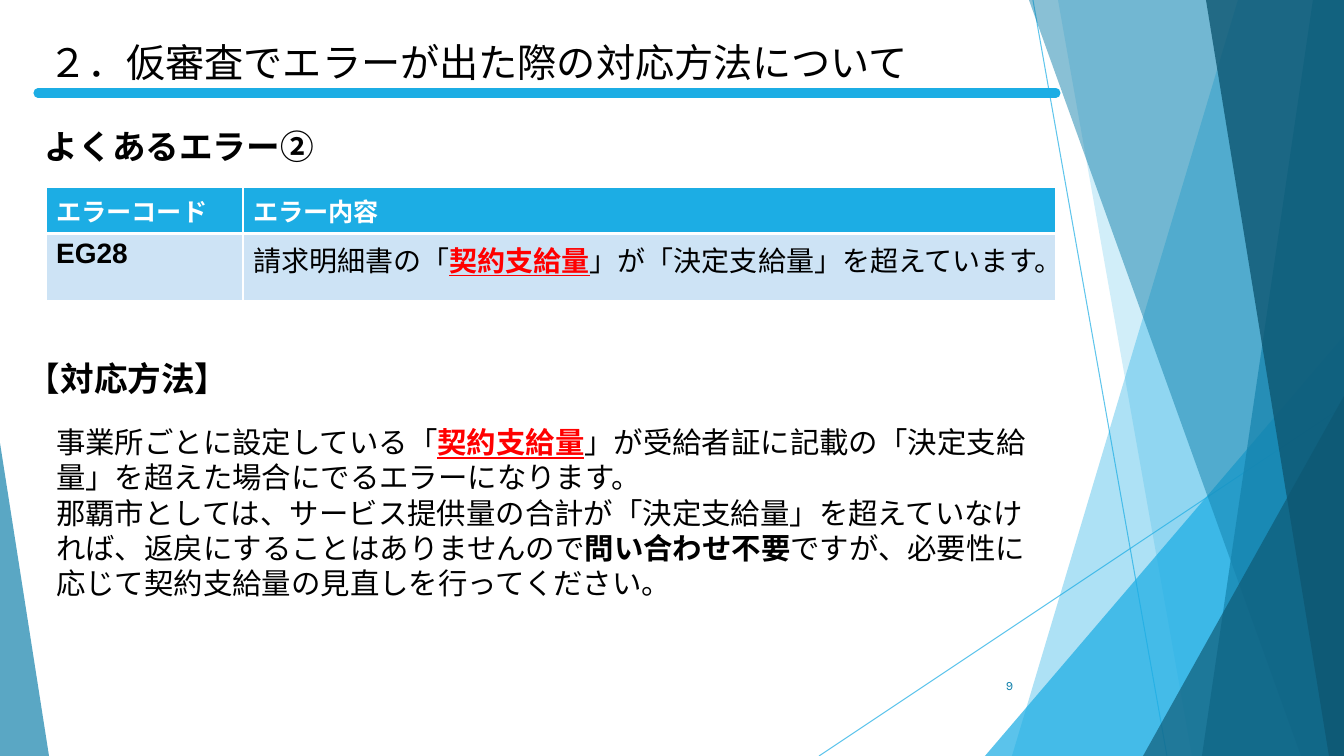
from lxml.etree import SubElement
from pptx import Presentation
from pptx.dml.color import RGBColor
from pptx.enum.shapes import MSO_CONNECTOR as CONNECTOR, MSO_SHAPE as SHAPE
from pptx.enum.text import MSO_ANCHOR as ANCHOR, MSO_AUTO_SIZE as AUTO_SIZE, PP_ALIGN as ALIGN
from pptx.oxml.ns import qn
from pptx.util import Pt

EMU_PER_PX = 914400 / 100.8
WIDTH, HEIGHT = 1344, 756
BLACK, WHITE, RED = "000000", "FFFFFF", "FF0000"
SKY, BLUE, NAVY, PALE = "1CADE4", "1482AC", "0E5772", "CDE3F5"


def px(*lengths):
    return [round(length * EMU_PER_PX) for length in lengths]


def paint(fill, color, opacity=100):
    fill.solid()
    fill.fore_color.rgb = RGBColor.from_string(color)
    if opacity < 100:
        tint = fill._xPr.find(qn("a:solidFill"))[0]
        SubElement(tint, qn("a:alpha"), val=str(opacity * 1000))


def add_runs(paragraph, runs, size, font, color=BLACK):
    """Each run is (text, style); style holds b for bold and r for red underlined."""
    for text, style in runs:
        run = paragraph.add_run()
        run.text = text
        run.font.name = font
        run.font.size = Pt(size)
        run.font.bold = "b" in style
        run.font.underline = "r" in style
        paint(run.font.fill, RED if "r" in style else color)


def place(placeholder, box, anchor=ANCHOR.TOP):
    placeholder.left, placeholder.top, placeholder.width, placeholder.height = px(*box)
    frame = placeholder.text_frame
    frame.word_wrap = True
    frame.auto_size = AUTO_SIZE.NONE
    frame.vertical_anchor = anchor
    return frame


def add_text(slide, box, runs, size, align=ALIGN.LEFT, color=BLACK, anchor=ANCHOR.TOP):
    frame = place(slide.shapes.add_textbox(*px(*box)), box, anchor)
    paragraph = frame.paragraphs[0]
    paragraph.alignment = align
    add_runs(paragraph, runs, size, "Karla", color)


def add_line(slide, start, end, weight, opacity=100, cap="flat"):
    line = slide.shapes.add_connector(CONNECTOR.STRAIGHT, *px(*start, *end))
    line.line.width = Pt(weight)
    paint(line.line.fill, SKY, opacity)
    line.line._get_or_add_ln().set("cap", cap)
    SubElement(line._element.spPr, qn("a:effectLst"))


def finish_facet(facet, color, opacity):
    facet.shadow.inherit = False
    paint(facet.fill, color, opacity)
    facet.line.fill.background()


def add_band(slide, box, top_x, bottom_x, color, opacity):
    """A facet from a slanted left edge to the right side of the box."""
    left, top, width, height = box
    right, bottom = left + width, top + height
    outline = slide.shapes.build_freeform(left + top_x, top, scale=EMU_PER_PX)
    outline.add_line_segments([(right, top), (right, bottom), (left + bottom_x, bottom)])
    finish_facet(outline.convert_to_shape(), color, opacity)


def add_corner(slide, box, width, height, on_right, color, opacity):
    """A right triangle standing in a lower corner of the box."""
    left = box[0] + (box[2] - width if on_right else 0)
    top = box[1] + box[3] - height
    corner = slide.shapes.add_shape(SHAPE.ISOSCELES_TRIANGLE, *px(left, top, width, height))
    corner.adjustments[0] = 1 if on_right else 0
    finish_facet(corner, color, opacity)


def draw_facets(slide, box):
    left, top, width, height = box
    right, bottom = left + width, top + height
    add_line(slide, (left + 1033, top), (left + 1167, bottom), 0.75, 70)
    add_line(slide, (right, top + 406), (left + 819, bottom), 0.75, 70)
    add_band(slide, box, 1238, 1012, SKY, 36)
    add_band(slide, box, 1058, 1192, SKY, 20)
    add_corner(slide, box, 359, 420, True, SKY, 72)
    add_band(slide, box, 1029, 1301, BLUE, 50)
    add_band(slide, box, 1313, 1202, BLUE, 70)
    add_band(slide, box, 1206, 1329, NAVY, 80)
    add_corner(slide, box, 201, 360, True, NAVY, 66)
    add_corner(slide, box, 49, 313, False, BLUE, 70)


def draw_title(slide, box):
    left, top, width, height = box
    frame = place(slide.shapes.title, (left, top, 949, height))
    paragraph = frame.paragraphs[0]
    paragraph.alignment = ALIGN.LEFT
    add_runs(paragraph, [("２．仮審査でエラーが出た際の対応方法について", "")], 28, "Karla")
    rule_y = top + height + 3
    add_line(slide, (left, rule_y), (left + width, rule_y), 6.5, cap="rnd")


def add_borders(cell, top, bottom):
    properties = cell._tc.get_or_add_tcPr()
    for side, weight in (("L", 1), ("R", 1), ("T", top), ("B", bottom)):
        border = SubElement(properties, qn(f"a:ln{side}"), w=str(Pt(weight)))
        SubElement(SubElement(border, qn("a:solidFill")), qn("a:srgbClr"), val=WHITE)


def draw_error_table(slide, box):
    rows = [
        [[("エラーコード", "b")], [("エラー内容", "b")]],
        [[("EG28", "b")],
         [("請求明細書の「", ""), ("契約支給量", "br"), ("」が「決定支給量」を超えています。", "")]],
    ]
    # Row height, fill, text size, font, text colour, top and bottom border
    looks = [(40, SKY, 18, "Karla", WHITE, 1, 3), (67, PALE, 20, "Arial", BLACK, 3, 1)]
    code_width = 197
    table = slide.shapes.add_table(2, 2, *px(*box)).table
    for column, width in zip(table.columns, px(code_width, box[2] - code_width)):
        column.width = width
    for row, texts, look in zip(table.rows, rows, looks):
        height, fill, size, font, color, top, bottom = look
        row.height = px(height)[0]
        for cell, runs in zip(row.cells, texts):
            add_borders(cell, top, bottom)
            paint(cell.fill, fill)
            add_runs(cell.text_frame.paragraphs[0], runs, size, font, color)


def draw_remedy(slide, box):
    remedy = [
        [("事業所ごとに設定している「", ""), ("契約支給量", "br"),
         ("」が受給者証に記載の「決定支給量」を超えた場合にでるエラーになります。", "")],
        [("那覇市としては、サービス提供量の合計が「決定支給量」を超えていなければ、"
          "返戻にすることはありませんので", ""),
         ("問い合わせ不要", "b"),
         ("ですが、必要性に応じて契約支給量の見直しを行ってください。", "")],
    ]
    frame = place(slide.placeholders[1], box)
    for index, runs in enumerate(remedy):
        paragraph = frame.add_paragraph() if index else frame.paragraphs[0]
        properties = paragraph._p.get_or_add_pPr()
        properties.set("marL", "0")
        properties.set("indent", "0")
        SubElement(properties, qn("a:buNone"))
        paragraph.space_before = Pt(0)
        paragraph.alignment = ALIGN.LEFT
        add_runs(paragraph, runs, 21, "Arial")


def main():
    deck = Presentation()
    deck.slide_width, deck.slide_height = px(WIDTH, HEIGHT)
    slide = deck.slides.add_slide(deck.slide_layouts[1])

    # Background and title
    draw_facets(slide, (0, 0, WIDTH, HEIGHT))
    draw_title(slide, (38, 33, 1018, 57))

    # Error and its code
    add_text(slide, (35, 121, 1039, 50), [("よくあるエラー②", "b")], 24)
    draw_error_table(slide, (46, 187, 1010, 107))

    # Remedy
    add_text(slide, (17, 353, 1039, 50), [("【", ""), ("対応方法】", "b")], 24)
    draw_remedy(slide, (46, 419, 1010, 191))

    # Page number
    add_text(slide, (947, 666, 76, 40), [("9", "")], 9, ALIGN.RIGHT, BLUE, ANCHOR.MIDDLE)
    deck.save("out.pptx")


if __name__ == "__main__":
    main()
